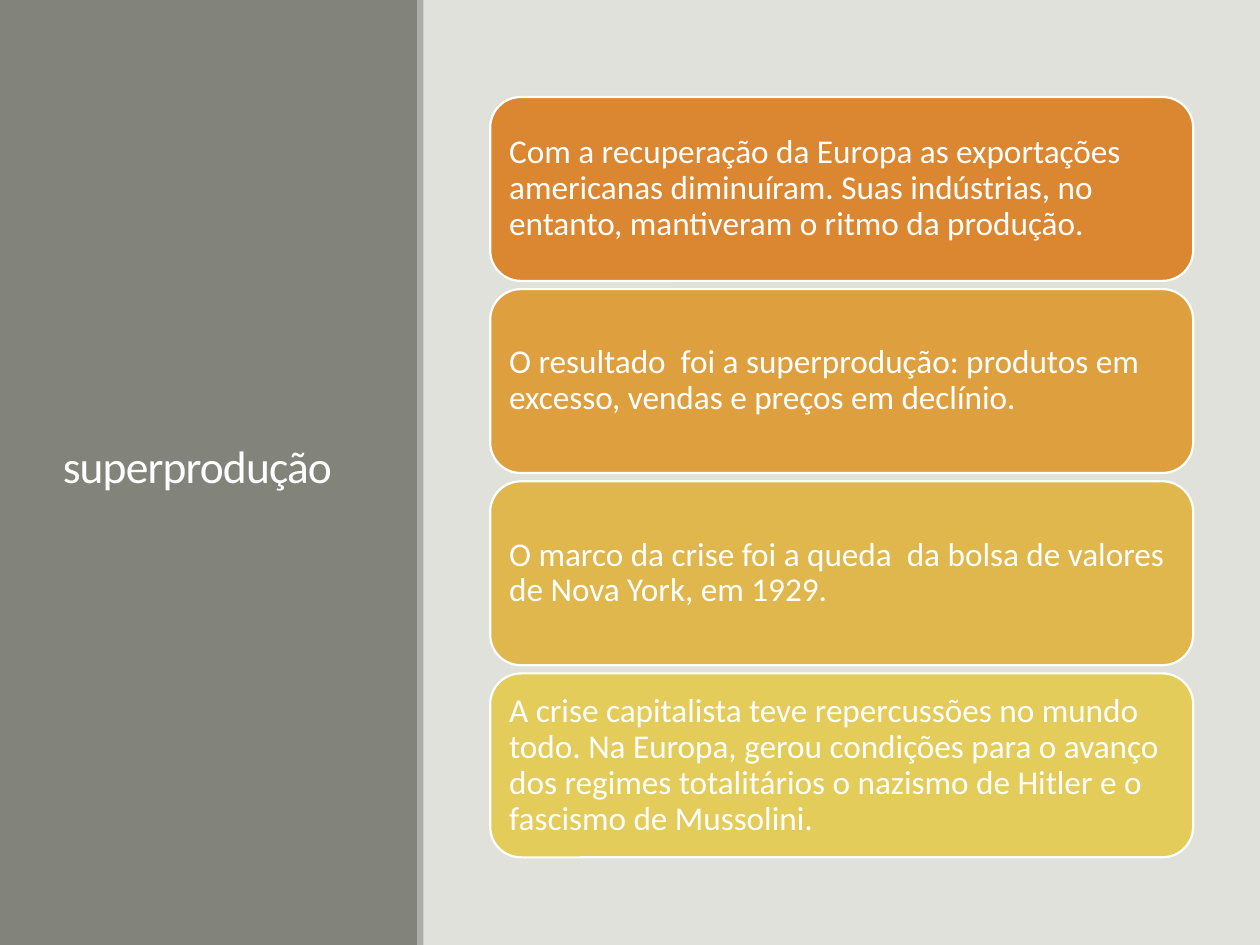
from pptx import Presentation
from pptx.dml.color import RGBColor
from pptx.enum.shapes import MSO_SHAPE
from pptx.enum.text import MSO_ANCHOR, PP_ALIGN
from pptx.util import Inches, Pt

RECTANGLE = MSO_SHAPE.RECTANGLE
ROUNDED = MSO_SHAPE.ROUNDED_RECTANGLE
MIDDLE = MSO_ANCHOR.MIDDLE
LEFT = PP_ALIGN.LEFT

# Content
TITLE = "superprodução"
CARDS = [
    ("DB8631", "Com a recuperação da Europa as exportações americanas diminuíram. "
               "Suas indústrias, no entanto, mantiveram o ritmo da produção."),
    ("DEA03F", "O resultado  foi a superprodução: produtos em excesso, "
               "vendas e preços em declínio."),
    ("E0B74C", "O marco da crise foi a queda  da bolsa de valores de Nova York, em 1929."),
    ("E3CC5A", "A crise capitalista teve repercussões no mundo todo. Na Europa, "
               "gerou condições para o avanço  dos regimes totalitários o nazismo "
               "de Hitler e o fascismo de Mussolini."),
]

# Layout in inches
WIDTH, HEIGHT = 10, 7.5
PANEL_WIDTH, STRIPE_WIDTH = 3.32, 0.05
CARD_LEFT, CARD_TOP, CARD_WIDTH, CARD_HEIGHT = 3.89, 0.77, 5.58, 1.46
CARD_STEP = 1.52 + 0.005
BACKGROUND, PANEL, STRIPE, WHITE = "E1E1DB", "82847C", "ACADA8", "FFFFFF"


def color(value):
    return RGBColor.from_string(value)


def add_block(slide, kind, box, fill, line=None):
    shape = slide.shapes.add_shape(kind, *map(Inches, box))
    shape.shadow.inherit = False
    shape.fill.solid()
    shape.fill.fore_color.rgb = color(fill)
    if line:
        shape.line.color.rgb = color(line)
        shape.line.width = Pt(1.25)
    else:
        shape.line.fill.background()
    return shape


def write(shape, text, size, line_spacing):
    frame = shape.text_frame
    frame.word_wrap = True
    frame.vertical_anchor = MIDDLE
    paragraph = frame.paragraphs[0]
    paragraph.text = text
    paragraph.alignment = LEFT
    paragraph.line_spacing = line_spacing
    paragraph.font.name = "Calibri"
    paragraph.font.size = Pt(size)
    paragraph.font.color.rgb = color(WHITE)
    return frame


presentation = Presentation()
presentation.slide_width, presentation.slide_height = Inches(WIDTH), Inches(HEIGHT)
slide = presentation.slides.add_slide(presentation.slide_layouts[6])
slide.background.fill.solid()
slide.background.fill.fore_color.rgb = color(BACKGROUND)

# Side panel with its stripe and title
add_block(slide, RECTANGLE, (0, 0, PANEL_WIDTH, HEIGHT), PANEL)
add_block(slide, RECTANGLE, (PANEL_WIDTH - 0.01, 0, STRIPE_WIDTH, HEIGHT), STRIPE)
title = slide.shapes.add_textbox(*map(Inches, (0.4, 0.57, 2.53, 6.31)))
title_frame = write(title, TITLE, 26, 0.85)
# Letter spacing, in hundredths of a point
title_frame.paragraphs[0].runs[0].font._element.set("spc", "-50")

# Stacked cards
for row, (fill, text) in enumerate(CARDS):
    box = (CARD_LEFT, CARD_TOP + row * CARD_STEP, CARD_WIDTH, CARD_HEIGHT)
    card = add_block(slide, ROUNDED, box, fill, WHITE)
    frame = write(card, text, 19, 0.9)
    frame.margin_left = frame.margin_right = Inches(0.08)
    frame.margin_top = frame.margin_bottom = Inches(0.08)

presentation.save("out.pptx")
